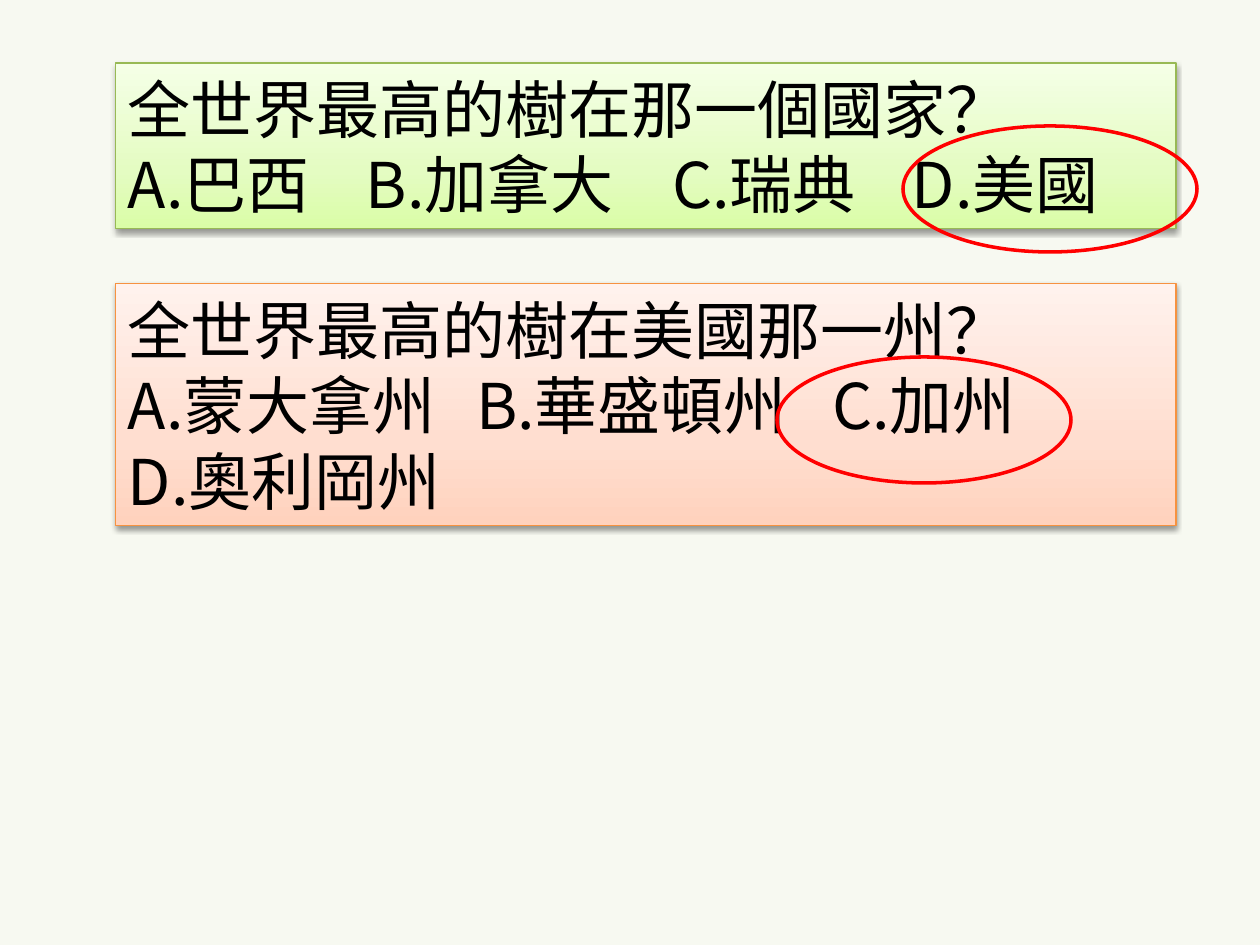
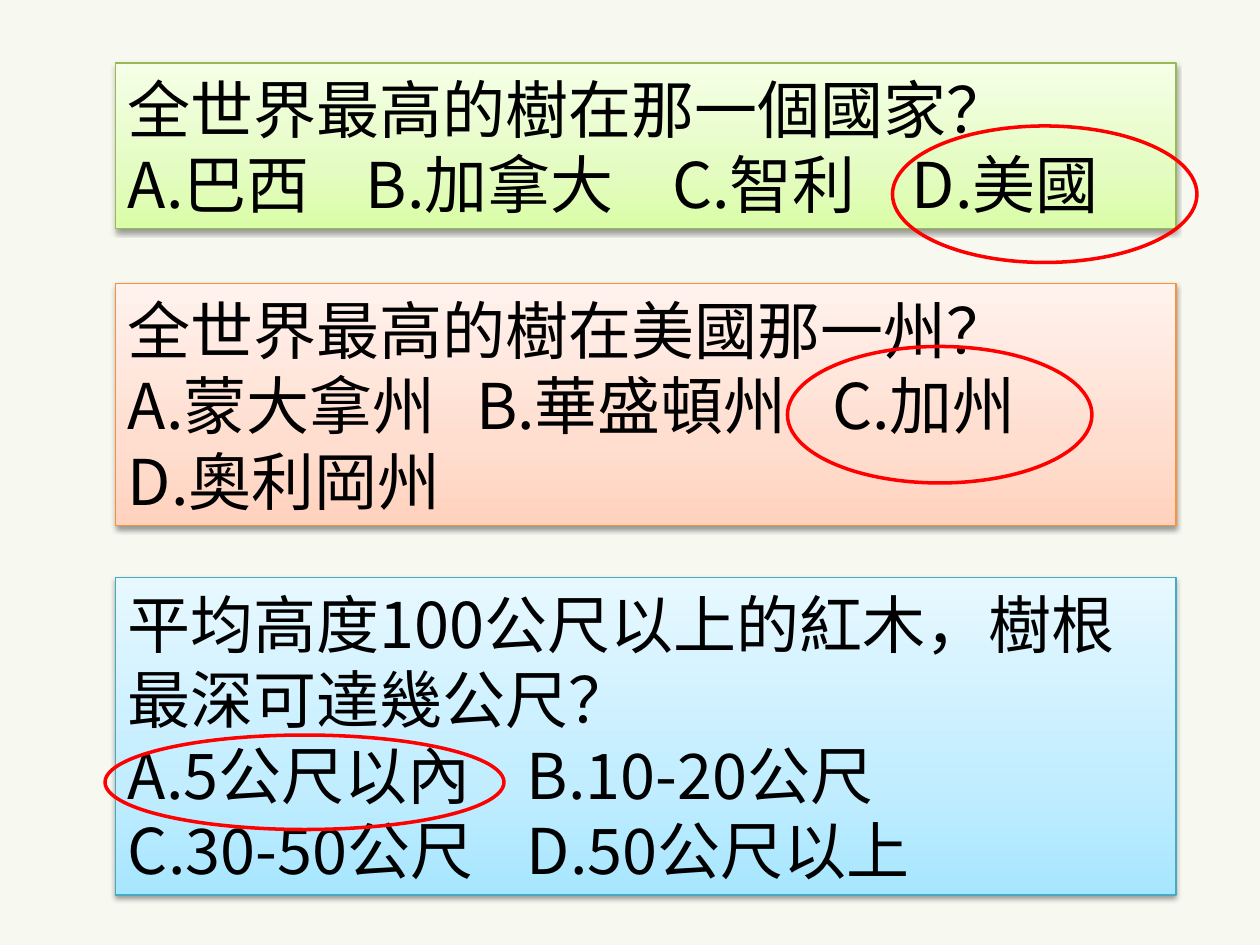
from lxml.etree import SubElement
from pptx import Presentation
from pptx.dml.color import RGBColor
from pptx.enum.shapes import MSO_SHAPE
from pptx.enum.text import MSO_ANCHOR, MSO_AUTO_SIZE, PP_ALIGN
from pptx.oxml.ns import qn
from pptx.util import Pt

FONT = "Noto Sans CJK SC"
COLORS = {
    "background": "F7F9F1",
    "text": "000000",
    "shadow": "000000",
    "answer": "FF0000",
    "green": ("DAFDA7", "E4FCC2", "F5FFE7"),
    "green line": "98B955",
    "orange": ("FFD2BD", "FFDED0", "FFF2ED"),
    "orange line": "F69240",
    "blue": ("A7E6FF", "C1EDFF", "E7F8FF"),
    "blue line": "46AAC5",
}
GRADIENT_POSITIONS = (0, 35, 100)
BOX_LEFT, BOX_WIDTH = 66, 606
COUNTRY_TABS = (136, 311, 448)
STATE_TABS = (199, 402.5)
DEPTH_TABS = (228,)


def rgb(name):
    return RGBColor.from_string(COLORS[name])


def fill_gradient(shape, name):
    shape.fill.gradient()
    shape.fill.gradient_angle = 90
    stops = shape._element.spPr.find(f".//{qn('a:gsLst')}")
    for stop in list(stops):
        stops.remove(stop)
    for position, color in zip(GRADIENT_POSITIONS, COLORS[name]):
        stop = SubElement(stops, qn("a:gs"), pos=str(position * 1000))
        SubElement(stop, qn("a:srgbClr"), val=color)


def add_shadow(shape):
    shape.shadow.inherit = False
    effects = shape._element.spPr.find(qn("a:effectLst"))
    shadow = SubElement(effects, qn("a:outerShdw"), blurRad=str(Pt(3.1)),
                        dist=str(Pt(1.6)), dir="5400000", rotWithShape="0")
    color = SubElement(shadow, qn("a:srgbClr"), val=COLORS["shadow"])
    SubElement(color, qn("a:alpha"), val="38000")


def set_tabs(paragraph, tabs):
    tab_list = SubElement(paragraph._p.get_or_add_pPr(), qn("a:tabLst"))
    for position in tabs:
        SubElement(tab_list, qn("a:tab"), pos=str(Pt(position)), algn="l")


def format_paragraph(paragraph, tabs):
    paragraph.alignment = PP_ALIGN.LEFT
    set_tabs(paragraph, tabs)
    for run in paragraph.runs:
        run.font.size = Pt(36)
        run.font.name = FONT
        run.font.color.rgb = rgb("text")
        SubElement(run._r.get_or_add_rPr(), qn("a:ea"), typeface=FONT)


def add_question(slide, top, height, color, question, option_rows, tabs):
    box = slide.shapes.add_shape(MSO_SHAPE.RECTANGLE, Pt(BOX_LEFT), Pt(top),
                                 Pt(BOX_WIDTH), Pt(height))
    fill_gradient(box, color)
    box.line.color.rgb = rgb(f"{color} line")
    box.line.width = Pt(0.75)
    add_shadow(box)
    frame = box.text_frame
    frame.word_wrap = True
    frame.auto_size = MSO_AUTO_SIZE.SHAPE_TO_FIT_TEXT
    frame.vertical_anchor = MSO_ANCHOR.MIDDLE
    frame.text = "\n".join([question] + ["\t".join(row) for row in option_rows])
    for paragraph in frame.paragraphs:
        format_paragraph(paragraph, tabs)


def circle_answer(slide, left, top, width, height):
    ellipse = slide.shapes.add_shape(MSO_SHAPE.OVAL, Pt(left), Pt(top),
                                     Pt(width), Pt(height))
    ellipse.shadow.inherit = False
    ellipse.fill.background()
    ellipse.line.color.rgb = rgb("answer")
    ellipse.line.width = Pt(2)


def add_tree_questions(slide, third_country):
    add_question(slide, 36, 94.5, "green", "全世界最高的樹在那一個國家？",
                 [("A.巴西", "B.加拿大", f"C.{third_country}", "D.美國")],
                 COUNTRY_TABS)
    add_question(slide, 162, 138.5, "orange", "全世界最高的樹在美國那一州？",
                 [("A.蒙大拿州", "B.華盛頓州", "C.加州"), ("D.奧利岡州",)],
                 STATE_TABS)


def add_root_question(slide):
    add_question(slide, 330, 181.5, "blue",
                 "平均高度100公尺以上的紅木，樹根最深可達幾公尺？",
                 [("A.5公尺以內", "B.10-20公尺"),
                  ("C.30-50公尺", "D.50公尺以上")],
                 DEPTH_TABS)


def main():
    presentation = Presentation()
    presentation.slide_width, presentation.slide_height = Pt(720), Pt(540)
    background = presentation.slide_master.background.fill
    background.solid()
    background.fore_color.rgb = rgb("background")
    blank = presentation.slide_layouts[6]

    slide = presentation.slides.add_slide(blank)
    add_tree_questions(slide, "瑞典")
    circle_answer(slide, 516, 72, 168, 72)
    circle_answer(slide, 444, 204, 168, 72)

    slide = presentation.slides.add_slide(blank)
    add_tree_questions(slide, "智利")
    add_root_question(slide)
    circle_answer(slide, 510, 72, 174, 78)
    circle_answer(slide, 450, 198, 174, 78)
    circle_answer(slide, 60, 420, 228, 54)

    presentation.save("out.pptx")


if __name__ == "__main__":
    main()
